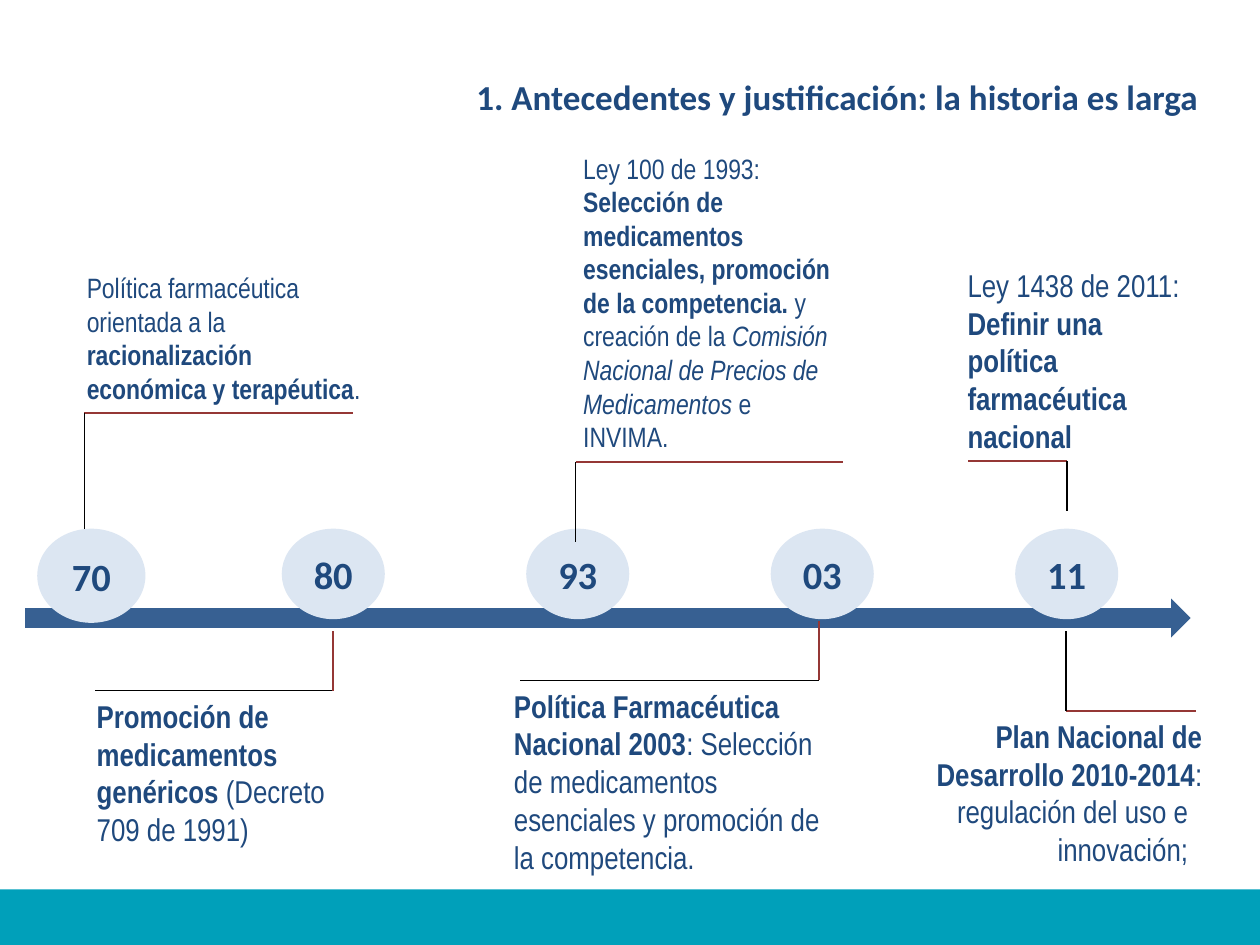
from dataclasses import dataclass
from typing import NamedTuple

from lxml import etree
from pptx import Presentation
from pptx.dml.color import RGBColor
from pptx.enum.shapes import MSO_CONNECTOR, MSO_SHAPE
from pptx.enum.text import MSO_ANCHOR, MSO_AUTO_SIZE, PP_ALIGN
from pptx.oxml.ns import qn
from pptx.util import Pt

STRAIGHT = MSO_CONNECTOR.STRAIGHT
RECTANGLE, ELLIPSE, ARROW = MSO_SHAPE.RECTANGLE, MSO_SHAPE.OVAL, MSO_SHAPE.RIGHT_ARROW
LEFT, CENTER, RIGHT = PP_ALIGN.LEFT, PP_ALIGN.CENTER, PP_ALIGN.RIGHT
TOP, MIDDLE = MSO_ANCHOR.TOP, MSO_ANCHOR.MIDDLE
NO_FIT, GROW = MSO_AUTO_SIZE.NONE, MSO_AUTO_SIZE.SHAPE_TO_FIT_TEXT


@dataclass(frozen=True)
class Theme:
    text: RGBColor = RGBColor(0x1F, 0x49, 0x7D)
    arrow: RGBColor = RGBColor(0x37, 0x60, 0x92)
    circle: RGBColor = RGBColor(0xDC, 0xE6, 0xF2)
    footer: RGBColor = RGBColor(0x00, 0xA0, 0xBA)
    red: RGBColor = RGBColor(0x95, 0x37, 0x35)
    black: RGBColor = RGBColor(0, 0, 0)
    heading_font: str = "Calibri"
    note_font: str = "Arial Narrow"
    title_size: float = 20
    year_size: float = 22
    note_size: float = 18
    small_note_size: float = 16


THEME = Theme()


class Box(NamedTuple):
    left: float
    top: float
    width: float
    height: float

    def lengths(self):
        return [Pt(value) for value in self]


class Span(NamedTuple):
    text: str
    bold: bool = False
    italic: bool = False


@dataclass(frozen=True)
class Note:
    box: Box
    paragraphs: list[list[Span]]
    size: float = THEME.note_size
    align: PP_ALIGN = LEFT
    last_indent: float = 0


class Elbow(NamedTuple):
    """Two lines that meet at the corner (x, y)."""
    x: float
    y: float
    across_to: float
    up_or_down_to: float
    red_across: bool = True


class Year(NamedTuple):
    label: str
    box: Box


FIRST_YEAR = Year("70", Box(22.3, 303.1, 59.8, 51.8))
YEAR_STEP = 139.7
YEARS = [Year(label, Box(162 + index * YEAR_STEP, 303.1, 56.9, 49.7))
         for index, label in enumerate(["80", "93", "03", "11"])]

NOTES = [
    Note(Box(42.5, 151.2, 178.6, 85), [[
        Span("Política farmacéutica orientada a la "),
        Span("racionalización económica y terapéutica", bold=True),
        Span(".")]], THEME.small_note_size),
    Note(Box(48.2, 394.6, 153.4, 94.3), [[
        Span("Promoción de medicamentos genéricos ", bold=True),
        Span("(Decreto 709 de 1991)")]]),
    Note(Box(326.2, 82.8, 158.4, 181.4), [[
        Span("Ley 100 de 1993: "),
        Span("Selección de medicamentos esenciales, promoción de la competencia. ", bold=True),
        Span("y creación de la "),
        Span("Comisión Nacional de Precios de Medicamentos ", italic=True),
        Span("e INVIMA.")]], THEME.small_note_size),
    Note(Box(286.6, 388.8, 203.8, 116.6), [[
        Span("Política Farmacéutica Nacional 2003", bold=True),
        Span(": Selección de medicamentos esenciales y promoción de la competencia.")]]),
    Note(Box(545.8, 148.3, 141.8, 116.6), [[
        Span("Ley 1438 de 2011: "),
        Span("Definir una política farmacéutica nacional", bold=True)]]),
    Note(Box(518.4, 406.1, 175.7, 94.3), [
        [Span("Plan Nacional de Desarrollo 2010-2014", bold=True), Span(":")],
        [Span("regulación del uso e innovación;")]], align=RIGHT, last_indent=8),
]

ELBOWS = [
    Elbow(48.2, 236.2, 201.6, 315.4),
    Elbow(190.1, 394.6, 54, 360.7, red_across=False),
    Elbow(329, 264.2, 481.7, 309.6),
    Elbow(468, 388.8, 297.4, 355, red_across=False),
    Elbow(609.8, 263.5, 553, 292.3),
    Elbow(609.1, 406.1, 683.3, 360.7),
]


def style_font(font, name: str, size: float, bold: bool, italic: bool = False) -> None:
    font.name, font.size, font.bold, font.italic = name, Pt(size), bold, italic
    font.color.rgb = THEME.text


def add_filled(page, kind, box: Box, color: RGBColor):
    shape = page.shapes.add_shape(kind, *box.lengths())
    shape.shadow.inherit = False
    shape.fill.solid()
    shape.fill.fore_color.rgb = color
    shape.line.fill.background()
    return shape


def add_year(page, year: Year) -> None:
    circle = add_filled(page, ELLIPSE, year.box, THEME.circle)
    circle.line.color.rgb = THEME.circle
    circle.line.width = Pt(2)
    frame = circle.text_frame
    frame.text = year.label
    frame.vertical_anchor = MIDDLE
    para = frame.paragraphs[0]
    para.alignment = CENTER
    style_font(para.runs[0].font, THEME.heading_font, THEME.year_size, True)


def add_note(page, note: Note) -> None:
    frame = page.shapes.add_textbox(*note.box.lengths()).text_frame
    frame.word_wrap = True
    frame.auto_size = GROW
    for index, spans in enumerate(note.paragraphs):
        para = frame.add_paragraph() if index else frame.paragraphs[0]
        para.alignment = note.align
        for span in spans:
            run = para.add_run()
            run.text = span.text
            style_font(run.font, THEME.note_font, note.size, span.bold, span.italic)
    if note.last_indent:
        para._p.get_or_add_pPr().set("marR", str(Pt(note.last_indent)))


def add_line(page, start: tuple[float, float], end: tuple[float, float], red: bool) -> None:
    ends = [Pt(value) for value in (*start, *end)]
    line = page.shapes.add_connector(STRAIGHT, *ends)
    line.line.color.rgb = THEME.red if red else THEME.black
    line.line.width = Pt(1 if red else 0.75)
    etree.SubElement(line._element.spPr, qn("a:effectLst"))


def add_elbow(page, elbow: Elbow) -> None:
    corner = (elbow.x, elbow.y)
    add_line(page, corner, (elbow.across_to, elbow.y), elbow.red_across)
    add_line(page, corner, (elbow.x, elbow.up_or_down_to), not elbow.red_across)


def set_title(page, text: str, box: Box) -> None:
    title = page.shapes.title
    title.left, title.top, title.width, title.height = box.lengths()
    frame = title.text_frame
    frame.text = text
    frame.word_wrap = True
    frame.auto_size = NO_FIT
    frame.vertical_anchor = TOP
    para = frame.paragraphs[0]
    para.alignment = RIGHT
    style_font(para.runs[0].font, THEME.heading_font, THEME.title_size, True)


def main() -> None:
    deck = Presentation()
    deck.slide_width, deck.slide_height = Pt(720), Pt(540)
    page = deck.slides.add_slide(deck.slide_layouts[5])

    # Title, footer band and time arrow
    set_title(page, "1. Antecedentes y justificación: la historia es larga",
              Box(241.9, 39.6, 450, 31.7))
    add_filled(page, RECTANGLE, Box(0, 508.3, 720, 31.7), THEME.footer)
    add_filled(page, ARROW, Box(14.4, 342, 666, 22.3), THEME.arrow)

    # Milestones: the first circle covers the end of its line
    for year in YEARS:
        add_year(page, year)
    for note in NOTES:
        add_note(page, note)
    for elbow in ELBOWS:
        add_elbow(page, elbow)
    add_year(page, FIRST_YEAR)

    deck.save("out.pptx")


if __name__ == "__main__":
    main()
